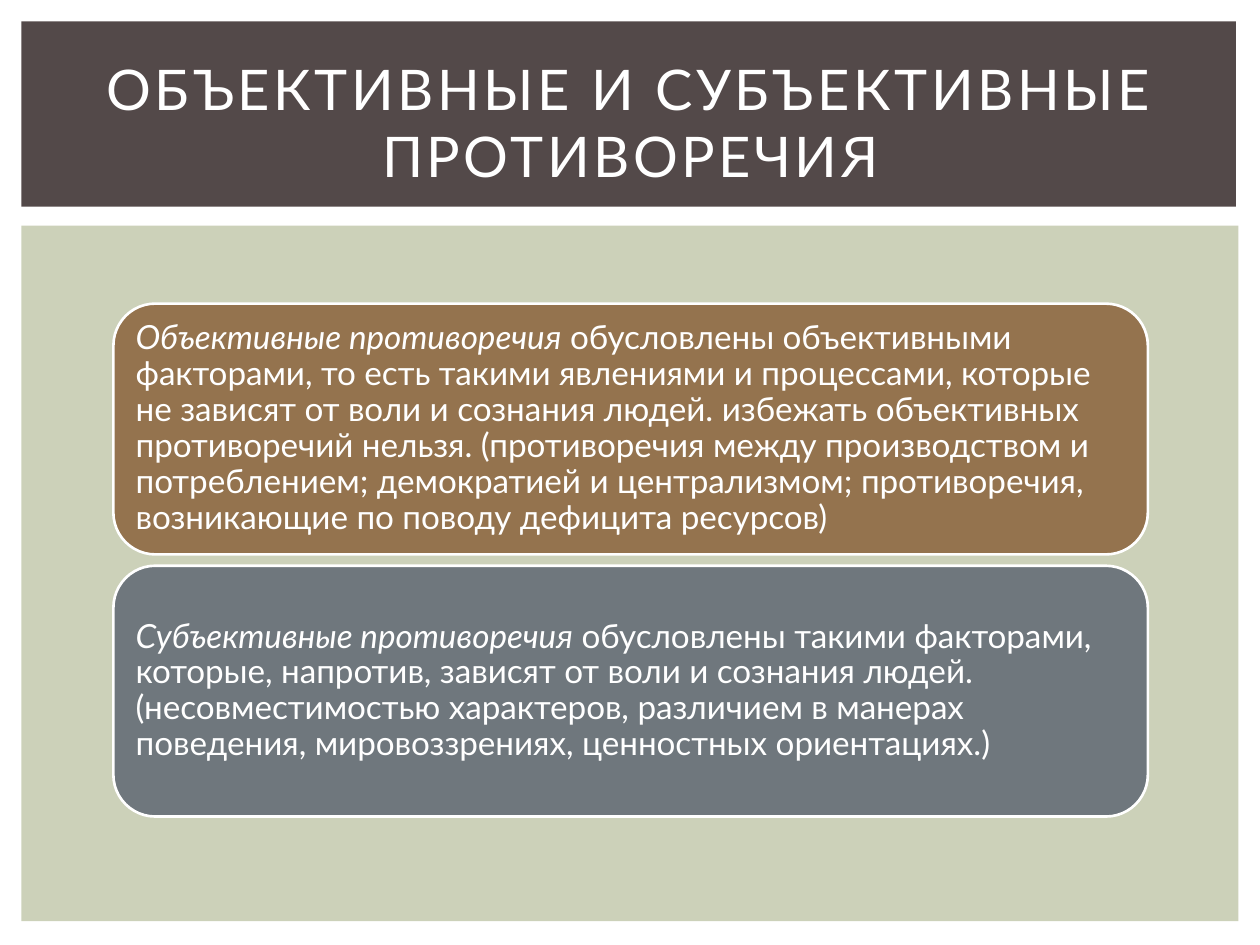
import pptx
import pptx.util
import pptx.dml.color
import pptx.enum.shapes
import pptx.enum.text

Inches = pptx.util.Inches
Pt = pptx.util.Pt
SHAPE = pptx.enum.shapes.MSO_SHAPE
MIDDLE = pptx.enum.text.MSO_ANCHOR.MIDDLE
ALIGN = pptx.enum.text.PP_ALIGN


def color(hex_string):
    return pptx.dml.color.RGBColor.from_string(hex_string)


def add_block(kind, left, top, width, height, fill):
    block = page.shapes.add_shape(
        kind, Inches(left), Inches(top), Inches(width), Inches(height))
    block.shadow.inherit = False
    block.fill.solid()
    block.fill.fore_color.rgb = color(fill)
    block.line.fill.background()
    return block


deck = pptx.Presentation()
deck.slide_width = Inches(10)
deck.slide_height = Inches(7.5)
page = deck.slides.add_slide(deck.slide_layouts[6])
page.background.fill.solid()
page.background.fill.fore_color.rgb = color("FFFFFF")

# Body panel and title band
add_block(SHAPE.RECTANGLE, 0.17, 1.79, 9.66, 5.52, "CCD1B9")
add_block(SHAPE.RECTANGLE, 0.17, 0.17, 9.64, 1.47, "534949")

# Title
title = page.shapes.add_textbox(Inches(0.42), Inches(0.39), Inches(9.17), Inches(1.15))
title.text_frame.word_wrap = True
title.text_frame.vertical_anchor = MIDDLE
para = title.text_frame.paragraphs[0]
para.text = "ОБЪЕКТИВНЫЕ И СУБЪЕКТИВНЫЕ ПРОТИВОРЕЧИЯ"
para.alignment = ALIGN.CENTER
span = para.runs[0]
span.font.name = "Lato"
span.font.size = Pt(32)
span.font.color.rgb = color("FFFFFF")
span.font._element.set("spc", "200")  # letter spacing of 2 pt

# Two definition cards: term in italics, then its explanation
cards = [
    ("94734E", "Объективные противоречия",
     " обусловлены объективными факторами, то есть такими явлениями и процессами, "
     "которые не зависят от воли и сознания людей. избежать объективных противоречий "
     "нельзя. (противоречия между производством и потреблением; демократией и "
     "централизмом; противоречия, возникающие по поводу дефицита ресурсов)"),
    ("6F777D", "Субъективные противоречия",
     " обусловлены такими факторами, которые, напротив, зависят от воли и сознания "
     "людей. (несовместимостью характеров, различием в манерах поведения, "
     "мировоззрениях, ценностных ориентациях.)"),
]
for index, (fill, term, explanation) in enumerate(cards):
    card = add_block(SHAPE.ROUNDED_RECTANGLE, 0.9, 2.41 + index * 2.08, 8.21, 1.99, fill)
    card.line.color.rgb = color("FFFFFF")
    card.line.width = Pt(1.5)
    frame = card.text_frame
    frame.word_wrap = True
    frame.vertical_anchor = MIDDLE
    frame.margin_left = frame.margin_right = Inches(0.08)
    frame.margin_top = frame.margin_bottom = Inches(0.08)
    para = frame.paragraphs[0]
    para.alignment = ALIGN.LEFT
    para.line_spacing = 0.9
    for text, italic in ((term, True), (explanation, False)):
        span = para.add_run()
        span.text = text
        span.font.name = "Lato"
        span.font.size = Pt(19)
        span.font.italic = italic
        span.font.color.rgb = color("FFFFFF")

deck.save("out.pptx")
